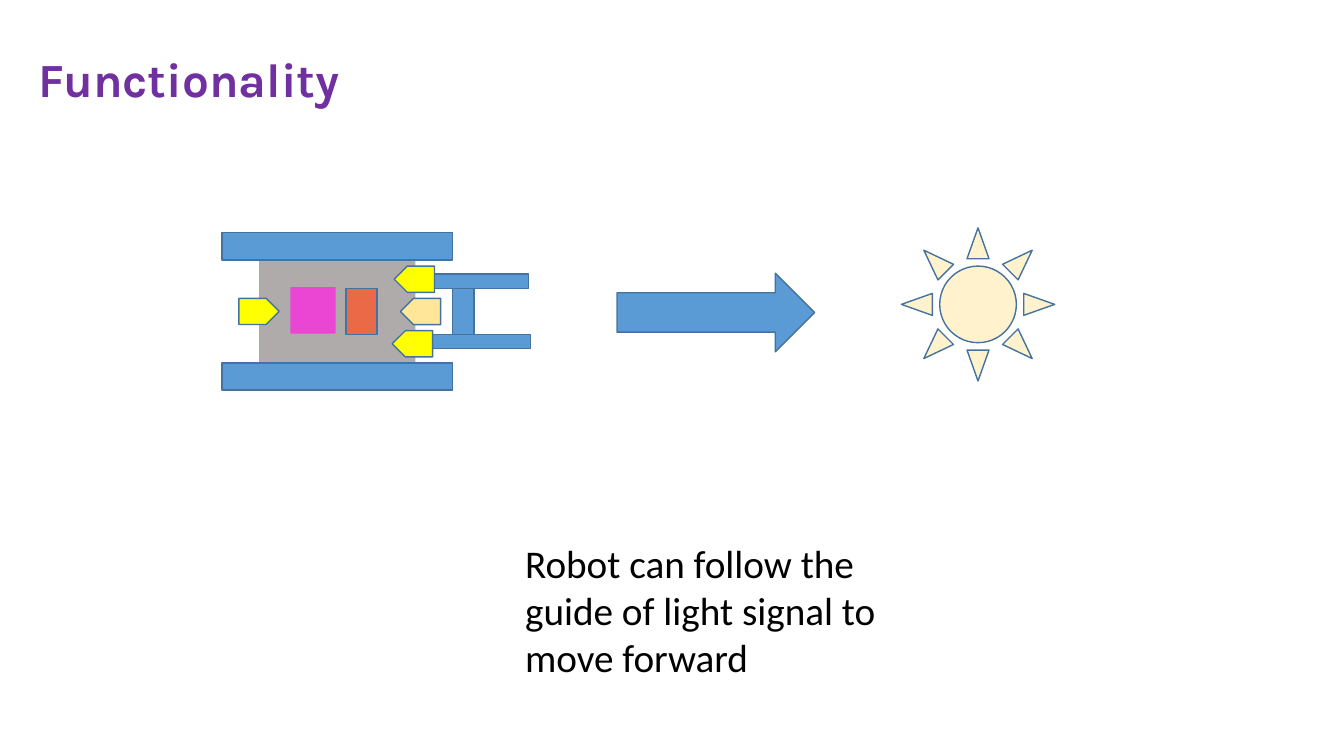
import pptx
import pptx.dml.color
import pptx.enum.shapes
import pptx.enum.text
import pptx.util

Inches = pptx.util.Inches
Pt = pptx.util.Pt
SHAPE = pptx.enum.shapes.MSO_SHAPE
ALIGN = pptx.enum.text.PP_ALIGN

COLORS = {
    "blue": "5B9BD5",
    "outline": "43739E",
    "body": "AFABAB",
    "yellow": "FFFF00",
    "amber": "FFE699",
    "magenta": "EA46D3",
    "orange": "EA6946",
    "sun": "FFF2CC",
    "title": "7030A0",
    "text": "000000",
}


def color(name):
    return pptx.dml.color.RGBColor.from_string(COLORS[name])


def add_part(shapes, kind, left, top, width, height, fill, outlined=True, rotation=0):
    shape = shapes.add_shape(kind, Inches(left), Inches(top), Inches(width), Inches(height))
    shape.shadow.inherit = False
    shape.rotation = rotation
    shape.fill.solid()
    shape.fill.fore_color.rgb = color(fill)
    if outlined:
        shape.line.color.rgb = color("outline")
        shape.line.width = Pt(1)
    else:
        shape.line.fill.background()
    return shape


def add_robot(slide, left, top):
    shapes = slide.shapes.add_group_shape().shapes

    def block(x, y, width, height, fill, outlined=True):
        add_part(shapes, SHAPE.RECTANGLE, left + x, top + y, width, height, fill, outlined)

    def sensor(x, y, fill, rotation):
        add_part(shapes, SHAPE.PENTAGON, left + x, top + y, 0.4, 0.26, fill, rotation=rotation)

    block(2.29, 0.53, 0.21, 0.49, "blue")
    block(0.37, 0.27, 1.55, 1.02, "body", outlined=False)
    for track_top in (0, 1.29):
        block(0, track_top, 2.29, 0.27, "blue")
    for arm_left, arm_top in ((1.82, 0.41), (1.84, 1.01)):
        block(arm_left, arm_top, 1.22, 0.14, "blue")
    sensor(0.17, 0.65, "yellow", 0)
    for x, y, fill in ((1.71, 0.33, "yellow"), (1.77, 0.65, "amber"), (1.69, 0.97, "yellow")):
        sensor(x, y, fill, 180)
    block(0.68, 0.54, 0.45, 0.46, "magenta", outlined=False)
    block(1.23, 0.55, 0.31, 0.46, "orange")


def add_text(slide, left, top, width, height, text, font, size, fill, bold, wrap, alignment):
    box = slide.shapes.add_textbox(Inches(left), Inches(top), Inches(width), Inches(height))
    frame = box.text_frame
    frame.word_wrap = wrap
    frame.auto_size = pptx.enum.text.MSO_AUTO_SIZE.SHAPE_TO_FIT_TEXT
    paragraph = frame.paragraphs[0]
    paragraph.text = text
    paragraph.alignment = alignment
    paragraph.font.name = font
    paragraph.font.size = Pt(size)
    paragraph.font.bold = bold
    paragraph.font.color.rgb = color(fill)


def build_functionality_slide(presentation):
    slide = presentation.slides.add_slide(presentation.slide_layouts[6])
    add_robot(slide, 2.2, 2.31)
    add_part(slide.shapes, SHAPE.SUN, 8.94, 2.26, 1.52, 1.52, "sun")
    add_part(slide.shapes, SHAPE.RIGHT_ARROW, 6.12, 2.71, 1.96, 0.78, "blue")
    add_text(slide, 0.24, 0.45, 3.27, 0.67, "Functionality",
             "Karla", 34, "title", True, False, ALIGN.CENTER)
    add_text(slide, 5.11, 5.3, 3.83, 1.51,
             "Robot can follow the guide of light signal to move forward",
             "Calibri", 28, "text", False, True, ALIGN.LEFT)


def main():
    presentation = pptx.Presentation()
    presentation.slide_width = Inches(13.33)
    presentation.slide_height = Inches(7.5)
    build_functionality_slide(presentation)
    presentation.save("out.pptx")


if __name__ == "__main__":
    main()
